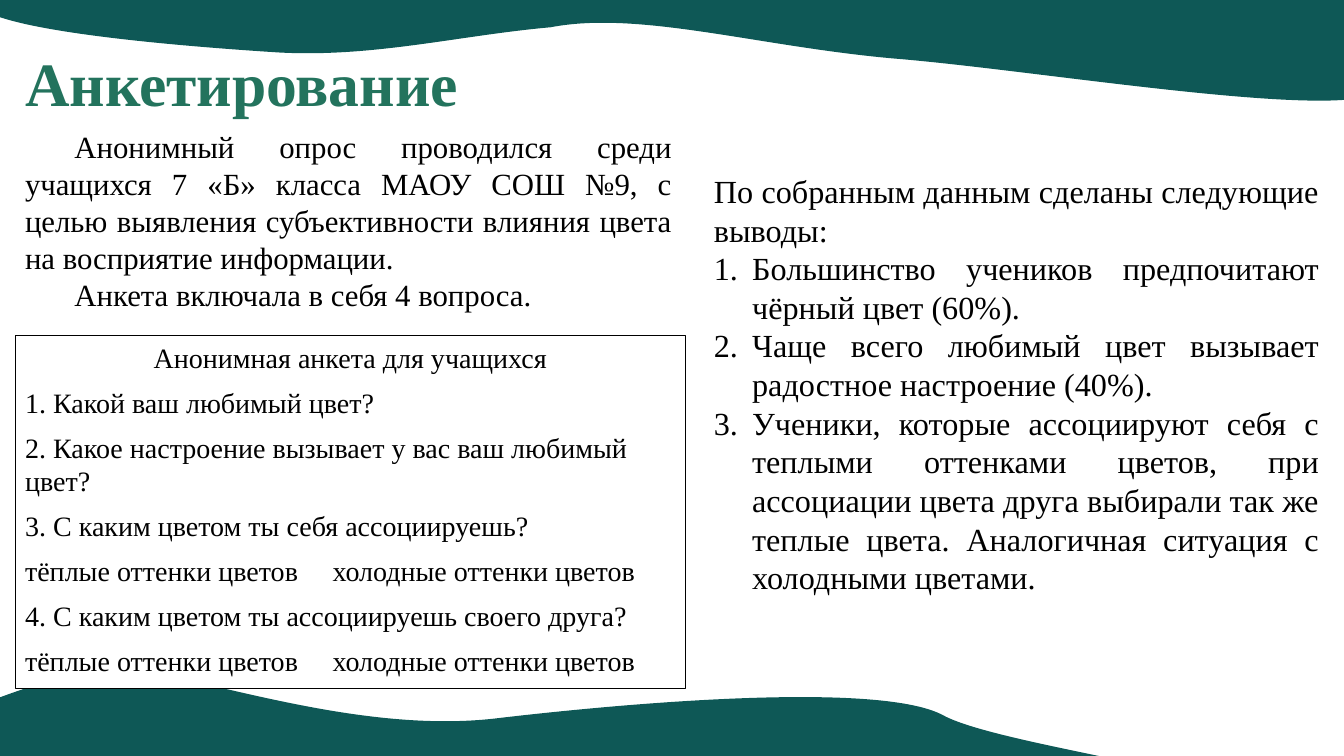
import math
import pptx
import pptx.util
import pptx.dml.color
import pptx.enum.shapes
import pptx.enum.text
import lxml.etree

Inches = pptx.util.Inches
Pt = pptx.util.Pt
ALIGN = pptx.enum.text.PP_ALIGN
ANCHOR = pptx.enum.text.MSO_ANCHOR
AUTO_SIZE = pptx.enum.text.MSO_AUTO_SIZE
NAMESPACE = "{http://schemas.openxmlformats.org/drawingml/2006/main}"


def paint(fill, color):
    fill.solid()
    fill.fore_color.rgb = pptx.dml.color.RGBColor.from_string(color)


def write(paragraph, text, size, color="000000", bold=False, **paragraph_format):
    defaults = {"alignment": ALIGN.LEFT, "line_spacing": 1.0,
                "space_before": Pt(0), "space_after": Pt(0)}
    for name, value in {**defaults, **paragraph_format}.items():
        setattr(paragraph, name, value)
    run = paragraph.add_run()
    run.text = text
    font_format = {"name": "Times New Roman", "size": Pt(size), "bold": bold}
    for name, value in font_format.items():
        setattr(run.font, name, value)
    paint(run.font.fill, color)


presentation = pptx.Presentation()
presentation.slide_width = Inches(13.33)
presentation.slide_height = Inches(7.5)
slide = presentation.slides.add_slide(presentation.slide_layouts[1])
title = slide.shapes.title
conclusions = slide.placeholders[1]

waves = [
    ((-1.37, 6.63, 13.89, 1.53), 0,
     [(-1.32, 7.73),
      (-1.73, 7.54), (0.39, 6.7), (1.01, 6.63),
      (1.64, 6.57), (3.38, 7.3), (4.9, 7.13),
      (6.42, 6.95), (8.77, 6.77), (9.36, 7.1),
      (9.96, 7.42), (12.83, 7.74), (12.49, 8.06),
      (12.15, 8.39), (5.76, 7.8), (3.46, 7.75),
      (1.16, 7.69), (-0.91, 7.92), (-1.32, 7.73)]),
    ((-0.2, -0.58, 14.6, 1.93), 176.7,
     [(14.04, -0.53),
      (14.77, -0.33), (14.2, 0.73), (13.62, 0.94),
      (13.03, 1.16), (10.23, 0.69), (8.87, 0.58),
      (7.51, 0.46), (6.34, 0.1), (5.46, 0.27),
      (4.56, 0.35), (3.71, 0.57), (2.77, 0.52),
      (1.82, 0.46), (-0.53, 0.28), (-0.21, -0.06),
      (0.12, -0.41), (6.9, -0.19), (9.27, -0.27),
      (11.65, -0.35), (13.32, -0.73), (14.04, -0.53)]),
]
for (left, top, width, height), rotation, points in waves:
    cosine, sine = math.cos(math.radians(rotation)), math.sin(math.radians(rotation))
    local_points = []
    for x, y in points:
        across, down = x - left - width / 2, y - top - height / 2
        local_points.append((Inches(width / 2 + across * cosine + down * sine),
                             Inches(height / 2 + down * cosine - across * sine)))
    builder = slide.shapes.build_freeform(*local_points[0])
    builder.add_line_segments(local_points[1:], close=True)
    wave = builder.convert_to_shape()
    wave_format = {"left": Inches(left), "top": Inches(top), "width": Inches(width),
                   "height": Inches(height), "rotation": rotation}
    for name, value in wave_format.items():
        setattr(wave, name, value)
    outline = next(wave.element.iter(NAMESPACE + "path"))
    outline.set("w", str(Inches(width)))
    outline.set("h", str(Inches(height)))
    for segment in list(outline):
        outline.remove(segment)
    start = lxml.etree.SubElement(outline, NAMESPACE + "moveTo")
    for index, (x, y) in enumerate(local_points):
        if index % 3 == 1:
            curve = lxml.etree.SubElement(outline, NAMESPACE + "cubicBezTo")
        parent = curve if index else start
        lxml.etree.SubElement(parent, NAMESPACE + "pt", x=str(x), y=str(y))
    lxml.etree.SubElement(outline, NAMESPACE + "close")
    wave.shadow.inherit = False
    paint(wave.fill, "0E5856")
    wave.line.fill.background()
    title.element.addprevious(wave.element)

panels = []
for box, line_color, line_width in [
    ((11.26, 5.08, 3.16, 2.42), "FFFFFF", 1),
    ((0.15, 3.33, 6.65, 3.5), "000000", 0.75),
]:
    panel = slide.shapes.add_shape(
        pptx.enum.shapes.MSO_SHAPE.RECTANGLE, *map(Inches, box))
    panel.shadow.inherit = False
    paint(panel.fill, "FFFFFF")
    paint(panel.line.fill, line_color)
    panel.line.width = Pt(line_width)
    panels.append(panel)
corner, questionnaire = panels
title.element.addnext(corner.element)
introduction = slide.shapes.add_textbox(Inches(0.15), Inches(1.22), Inches(6.61), Inches(1.95))

for shape, box in [(title, (0.15, 0.29, 11.65, 1.13)), (conclusions, (6.98, 1.65, 6.21, 4.45))]:
    for name, value in zip(("left", "top", "width", "height"), box):
        setattr(shape, name, Inches(value))

for shape, anchor, auto_size in [
    (title, ANCHOR.MIDDLE, AUTO_SIZE.NONE),
    (conclusions, ANCHOR.TOP, AUTO_SIZE.SHAPE_TO_FIT_TEXT),
    (questionnaire, ANCHOR.TOP, AUTO_SIZE.NONE),
    (introduction, ANCHOR.TOP, AUTO_SIZE.SHAPE_TO_FIT_TEXT),
]:
    frame_format = {"word_wrap": True, "vertical_anchor": anchor, "auto_size": auto_size}
    for name, value in frame_format.items():
        setattr(shape.text_frame, name, value)

write(title.text_frame.paragraphs[0], "Анкетирование", 44, "23735D", True, line_spacing=0.9)

introduction_texts = [
    "Анонимный опрос проводился среди учащихся 7 «Б» класса МАОУ СОШ №9, "
    "с целью выявления субъективности влияния цвета на восприятие информации.",
    "Анкета включала в себя 4 вопроса.",
]
for index, text in enumerate(introduction_texts):
    frame = introduction.text_frame
    paragraph = frame.add_paragraph() if index else frame.paragraphs[0]
    paragraph._p.get_or_add_pPr().set("indent", str(Inches(0.49)))
    write(paragraph, text, 22, alignment=ALIGN.JUSTIFY)

shades = "тёплые оттенки цветов\tхолодные оттенки цветов"
questions = [
    "Анонимная анкета для учащихся",
    "1. Какой ваш любимый цвет?",
    "2. Какое настроение вызывает у вас ваш любимый цвет?",
    "3. С каким цветом ты себя ассоциируешь?",
    shades,
    "4. С каким цветом ты ассоциируешь своего друга?",
    shades,
]
for index, text in enumerate(questions):
    frame = questionnaire.text_frame
    paragraph = frame.add_paragraph() if index else frame.paragraphs[0]
    if text == shades:
        tabs = lxml.etree.SubElement(paragraph._p.get_or_add_pPr(), NAMESPACE + "tabLst")
        lxml.etree.SubElement(tabs, NAMESPACE + "tab", pos=str(Inches(3.05)), algn="l")
    write(paragraph, text, 20,
          alignment=ALIGN.LEFT if index else ALIGN.CENTER,
          space_after=Pt(8 if index < len(questions) - 1 else 0))

conclusion_texts = [
    "По собранным данным сделаны следующие выводы:",
    "Большинство учеников предпочитают чёрный цвет (60%).",
    "Чаще всего любимый цвет вызывает радостное настроение (40%).",
    "Ученики, которые ассоциируют себя с теплыми оттенками цветов, "
    "при ассоциации цвета друга выбирали так же теплые цвета. "
    "Аналогичная ситуация с холодными цветами.",
]
for index, text in enumerate(conclusion_texts):
    frame = conclusions.text_frame
    paragraph = frame.add_paragraph() if index else frame.paragraphs[0]
    properties = paragraph._p.get_or_add_pPr()
    indent = Inches(0.38) if index else 0
    properties.set("marL", str(indent))
    properties.set("indent", str(-indent))
    if index:
        lxml.etree.SubElement(properties, NAMESPACE + "buFont", typeface="+mj-lt")
        lxml.etree.SubElement(properties, NAMESPACE + "buAutoNum", type="arabicPeriod")
    else:
        lxml.etree.SubElement(properties, NAMESPACE + "buNone")
    write(paragraph, text, 23, alignment=ALIGN.JUSTIFY)

presentation.save("out.pptx")
